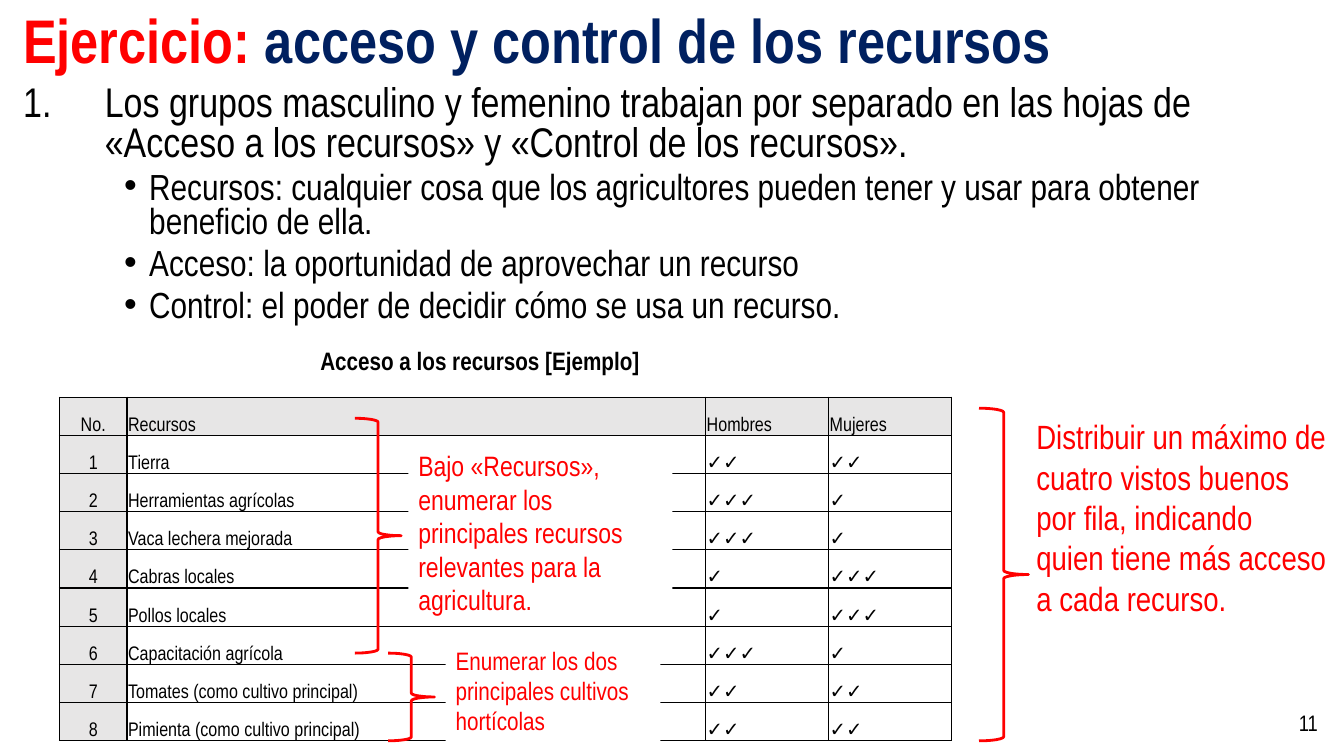
from lxml import etree
from pptx import Presentation
from pptx.dml.color import RGBColor
from pptx.enum.shapes import MSO_SHAPE as SHAPE
from pptx.enum.text import MSO_ANCHOR as ANCHOR, MSO_AUTO_SIZE as AUTO, PP_ALIGN as ALIGN
from pptx.oxml.ns import qn
from pptx.util import Inches, Pt

FONT = "Arial Narrow"
BLACK, WHITE, RED, NAVY, GREY = "000000", "FFFFFF", "FF0000", "002060", "E7E6E6"

RESOURCES = [
    ("Tierra", 2, 2),
    ("Herramientas agrícolas", 3, 1),
    ("Vaca lechera mejorada", 3, 1),
    ("Cabras locales", 1, 3),
    ("Pollos locales", 1, 3),
    ("Capacitación agrícola", 3, 1),
    ("Tomates (como cultivo principal)", 2, 2),
    ("Pimienta (como cultivo principal)", 2, 2),
]
DEFINITIONS = [
    "Recursos: cualquier cosa que los agricultores pueden tener y usar para obtener beneficio de ella.",
    "Acceso: la oportunidad de aprovechar un recurso",
    "Control: el poder de decidir cómo se usa un recurso.",
]


def rgb(color):
    return RGBColor.from_string(color)


def add_text(p, text, size=18, color=BLACK, bold=False, align=ALIGN.LEFT, spacing=None, before=None):
    p.alignment = align
    if spacing:
        p.line_spacing = spacing
    if before is not None:
        p.space_before = Pt(before)
    r = p.add_run()
    r.text = text
    r.font.name, r.font.size, r.font.bold = FONT, Pt(size), bold
    r.font.color.rgb = rgb(color)


def place(sp, x, y, w, h):
    sp.left, sp.top, sp.width, sp.height = map(Inches, (x, y, w, h))


def set_bullet(p, tag, left, hanging, **attrs):
    pPr = p._p.get_or_add_pPr()
    pPr.set("marL", str(Inches(left)))
    pPr.set("indent", str(-Inches(hanging)))
    etree.SubElement(pPr, qn("a:buFont"), typeface="Arial" if "char" in attrs else FONT)
    etree.SubElement(pPr, qn(tag), **attrs)


def add_title(slide, x, y, w, h):
    sp = slide.shapes.title
    place(sp, x, y, w, h)
    tf = sp.text_frame
    tf.auto_size, tf.vertical_anchor = AUTO.NONE, ANCHOR.MIDDLE
    for text, color in (("Ejercicio: ", RED), ("acceso y control de los recursos", NAVY)):
        add_text(tf.paragraphs[0], text, size=44, color=color, bold=True, spacing=0.9)


def add_instructions(slide, x, y, w, h):
    sp = slide.placeholders[1]
    place(sp, x, y, w, h)
    tf = sp.text_frame
    tf.auto_size = AUTO.NONE
    p = tf.paragraphs[0]
    add_text(p, "Los grupos masculino y femenino trabajan por separado en las hojas de "
             "«Acceso a los recursos» y «Control de los recursos».", size=29.6, spacing=0.8, before=10)
    set_bullet(p, "a:buAutoNum", 0.81, 0.81, type="arabicPeriod")
    for text in DEFINITIONS:
        p = tf.add_paragraph()
        p.level = 1
        add_text(p, text, size=25.9, spacing=0.8, before=5)
        set_bullet(p, "a:buChar", 1.25, 0.25, char="•")


def add_label(slide, text, x, y, w, h, fill=None, anchor=ANCHOR.TOP, **fmt):
    box = [Inches(v) for v in (x, y, w, h)]
    if fill:
        sp = slide.shapes.add_shape(SHAPE.RECTANGLE, *box)
        sp.shadow.inherit = False
        sp.fill.solid()
        sp.fill.fore_color.rgb = rgb(fill)
        sp.line.fill.background()
    else:
        sp = slide.shapes.add_textbox(*box)
    tf = sp.text_frame
    tf.word_wrap, tf.vertical_anchor = True, anchor
    add_text(tf.paragraphs[0], text, **fmt)


def add_brace(slide, x, y, w, h):
    sp = slide.shapes.add_shape(SHAPE.RIGHT_BRACE, *map(Inches, (x, y, w, h)))
    sp.shadow.inherit = False
    sp.fill.background()
    sp.line.color.rgb, sp.line.width = rgb(RED), Pt(2)


def format_cell(cell, text, fill, align):
    cell.margin_left = cell.margin_right = cell.margin_top = Inches(0.01)
    cell.margin_bottom = 0
    cell.vertical_anchor = ANCHOR.BOTTOM
    tcPr = cell._tc.get_or_add_tcPr()
    for side in ("a:lnL", "a:lnR", "a:lnT", "a:lnB"):
        ln = etree.SubElement(tcPr, qn(side), w=str(Pt(1)))
        solid = etree.SubElement(ln, qn("a:solidFill"))
        etree.SubElement(solid, qn("a:srgbClr"), val=BLACK)
    cell.fill.solid()
    cell.fill.fore_color.rgb = rgb(fill)
    add_text(cell.text_frame.paragraphs[0], text, size=14, align=align)


def add_resource_table(slide, x, y, w, h):
    rows = [("No.", "Recursos", "Hombres", "Mujeres")]
    rows += [(str(n), name, "✓" * men, "✓" * women)
             for n, (name, men, women) in enumerate(RESOURCES, 1)]
    table = slide.shapes.add_table(len(rows), 4, *map(Inches, (x, y, w, h))).table
    table.first_row = table.horz_banding = False
    number_w, check_w = 0.67, 1.22
    widths = (number_w, w - number_w - 2 * check_w, check_w, check_w)
    for col, width in zip(table.columns, widths):
        col.width = Inches(width)
    for i, row in enumerate(rows):
        table.rows[i].height = Inches(h / len(rows))
        for j, text in enumerate(row):
            format_cell(table.cell(i, j), text, GREY if i == 0 or j == 0 else WHITE,
                        ALIGN.CENTER if j == 0 else ALIGN.LEFT)


def add_example(slide, x, y, w, h):
    # Table with its caption
    add_resource_table(slide, x, y, w, h)
    add_label(slide, "Acceso a los recursos [Ejemplo]", x + 1.1, y - 0.56, 6.14, 0.4,
              bold=True, align=ALIGN.CENTER)
    # Note on the check marks
    add_label(slide, "Distribuir un máximo de cuatro vistos buenos por fila, indicando quien "
              "tiene más acceso a cada recurso.", x + 9.59, y + 0.14, 3.08, 2.52, size=24, color=RED)
    add_brace(slide, x + 9.12, y + 0.11, 0.49, h - 0.11)
    # Note on the main resources
    add_label(slide, "Bajo «Recursos», enumerar los principales recursos relevantes para la agricultura.",
              x + 3.46, y + 0.46, 2.62, 1.78, fill=WHITE, size=20, color=RED)
    add_brace(slide, x + 2.93, y + 0.21, 0.46, 2.33)
    # Note on the crops
    add_label(slide, "Enumerar los dos principales cultivos hortícolas",
              x + 3.83, y + 2.41, 2.13, 1.01, fill=WHITE, size=18, color=RED)
    add_brace(slide, x + 3.26, y + 2.54, 0.46, 0.87)


def main():
    prs = Presentation()
    prs.slide_width, prs.slide_height = Inches(13.33), Inches(7.5)
    slide = prs.slides.add_slide(prs.slide_layouts[1])
    add_title(slide, 0.13, -0.29, 12.31, 1.45)
    add_instructions(slide, 0.13, 0.8, 12.97, 2.65)
    add_example(slide, 0.59, 3.94, 8.85, 3.41)
    # Slide number
    add_label(slide, "11", 10.17, 6.97, 3, 0.4, anchor=ANCHOR.MIDDLE, size=16, align=ALIGN.RIGHT)
    prs.save("out.pptx")


if __name__ == "__main__":
    main()
